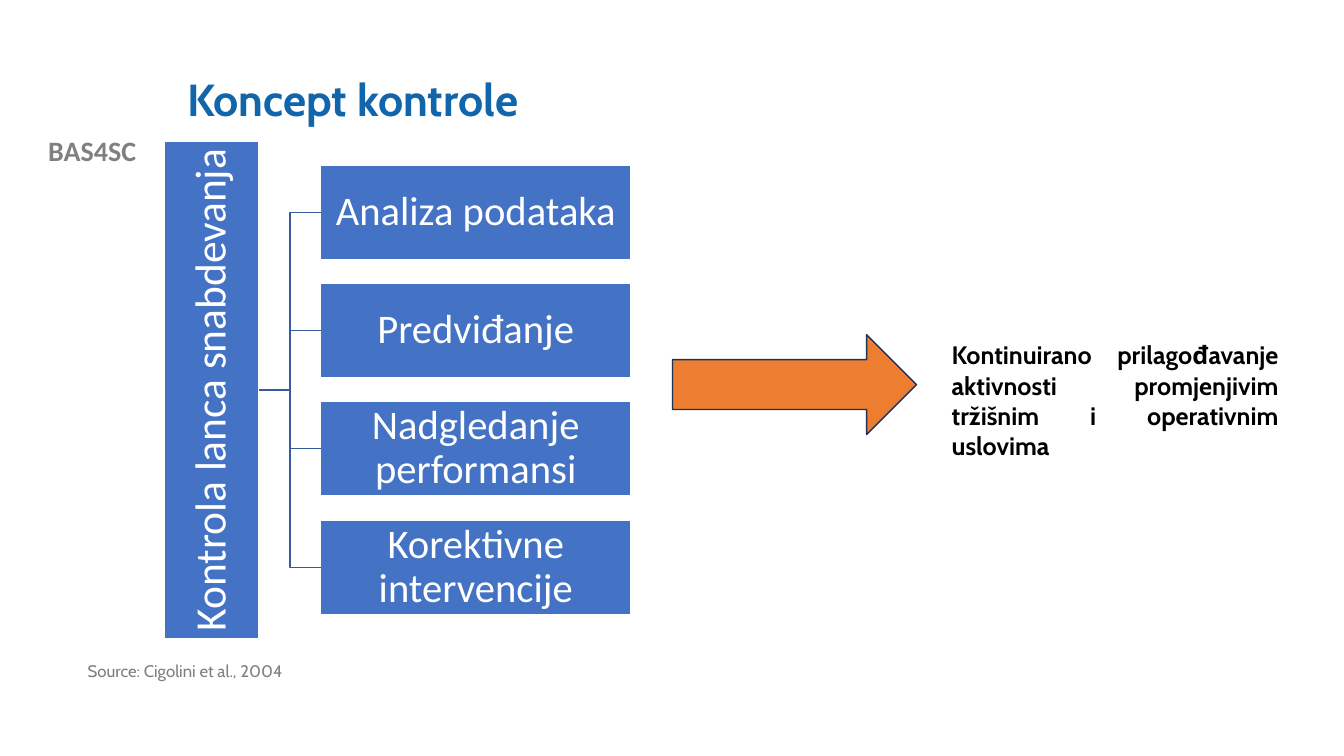
from pptx import Presentation
from pptx.dml.color import RGBColor
from pptx.enum.shapes import MSO_CONNECTOR, MSO_SHAPE
from pptx.enum.text import MSO_ANCHOR, PP_ALIGN
from pptx.oxml.ns import qn
from pptx.util import Pt
from lxml import etree

PX = 9144  # 100 px to the inch

WHITE = RGBColor(0xFF, 0xFF, 0xFF)
BLACK = RGBColor(0x00, 0x00, 0x00)
GRAY = RGBColor(0x80, 0x80, 0x80)
SOURCE_GRAY = RGBColor(0x7F, 0x7F, 0x7F)
TITLE_BLUE = RGBColor(0x10, 0x65, 0xAB)
BOX_BLUE = RGBColor(0x44, 0x72, 0xC4)
LINK_BLUE = RGBColor(0x36, 0x5B, 0x9D)
ORANGE = RGBColor(0xED, 0x7D, 0x31)
NAVY = RGBColor(0x1E, 0x32, 0x56)

STEPS = ["Analiza podataka", "Predviđanje",
         "Nadgledanje performansi", "Korektivne intervencije"]
STEP_TOP, STEP_SPAN = 164, 352  # first top, distance from first to last top

prs = Presentation()
prs.slide_width, prs.slide_height = 1333 * PX, 750 * PX
s = prs.slides.add_slide(prs.slide_layouts[6])


def write(sp, text, font, size, color, bold=False, align=PP_ALIGN.LEFT,
          anchor=MSO_ANCHOR.TOP, spacing=None):
    """Fill a shape with one formatted paragraph."""
    tf = sp.text_frame
    tf.word_wrap = True
    tf.vertical_anchor = anchor
    tf.text = text
    p = tf.paragraphs[0]
    p.alignment = align
    p.line_spacing = spacing
    f = p.runs[0].font
    f.name, f.size, f.bold = font, Pt(size), bold
    f.color.rgb = color


def add_filled(kind, left, top, width, height, fill, line):
    sp = s.shapes.add_shape(kind, left * PX, top * PX, width * PX, height * PX)
    sp.shadow.inherit = False
    sp.fill.solid()
    sp.fill.fore_color.rgb = fill
    sp.line.color.rgb = line
    sp.line.width = Pt(1)
    return sp


# Free text: place, then wording and format
texts = [
    ((0, 128, 183, 44), dict(text="BAS4SC", font="Calibri", size=20, color=GRAY,
                             bold=True, align=PP_ALIGN.CENTER)),
    ((176, 40, 1066, 122), dict(text="Koncept kontrole", font="Cabin", size=32,
                                color=TITLE_BLUE, bold=True, spacing=0.9,
                                anchor=MSO_ANCHOR.MIDDLE)),
    ((77, 653, 501, 52), dict(text="Source: Cigolini et al., 2004", font="Cabin",
                              size=12, color=SOURCE_GRAY, spacing=0.9)),
    ((934, 332, 344, 131), dict(
        text="Kontinuirano prilagođavanje aktivnosti promjenjivim "
             "tržišnim i operativnim uslovima",
        font="Cabin", size=18, color=BLACK, bold=True, align=PP_ALIGN.JUSTIFY)),
]
for place, content in texts:
    write(s.shapes.add_textbox(*(v * PX for v in place)), **content)

# Hierarchy: upright root and four steps
root = add_filled(MSO_SHAPE.RECTANGLE, 163, 140, 94, 494, BOX_BLUE, WHITE)
root.text_frame._txBody.bodyPr.set("vert", "vert270")
steps = [add_filled(MSO_SHAPE.RECTANGLE, 318, STEP_TOP + i * STEP_SPAN // 3,
                    308, 94, BOX_BLUE, WHITE) for i in range(len(STEPS))]

labels = [(root, "Kontrola lanca snabdevanja", 31)]
labels += [(step, text, 29) for step, text in zip(steps, STEPS)]
for sp, text, size in labels:
    tf = sp.text_frame
    tf.margin_left = tf.margin_right = tf.margin_top = tf.margin_bottom = 2 * PX
    write(sp, text, "Calibri", size, WHITE, align=PP_ALIGN.CENTER,
          anchor=MSO_ANCHOR.MIDDLE, spacing=0.9)

for step in steps:
    link = s.shapes.add_connector(MSO_CONNECTOR.ELBOW, 0, 0, 0, 0)
    link.begin_connect(root, 3)
    link.end_connect(step, 1)
    link.line.color.rgb = LINK_BLUE
    link.line.width = Pt(1)
    etree.SubElement(link._element.spPr, qn("a:effectLst"))

add_filled(MSO_SHAPE.RIGHT_ARROW, 667, 332, 242, 99, ORANGE, NAVY)

prs.save("out.pptx")
